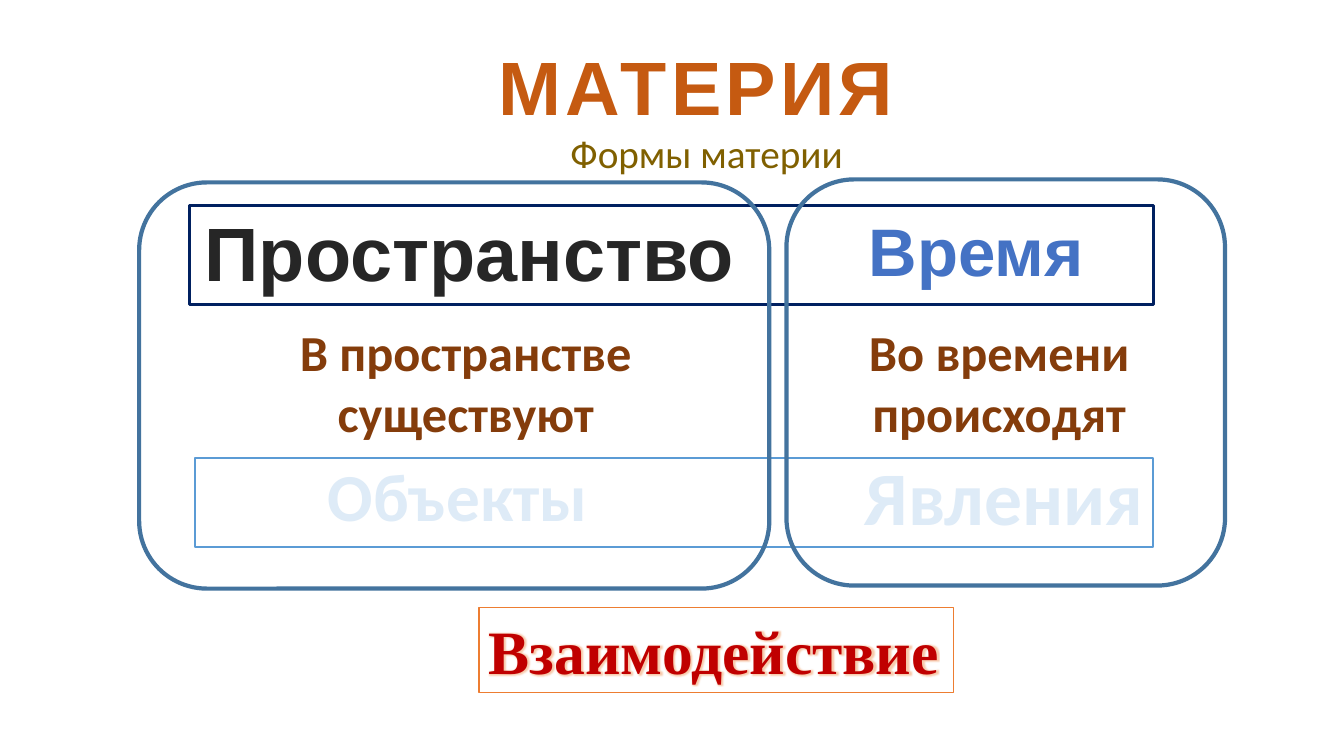
from lxml.etree import SubElement
from pptx import Presentation
from pptx.dml.color import RGBColor
from pptx.enum.shapes import MSO_SHAPE
from pptx.enum.text import MSO_ANCHOR, MSO_AUTO_SIZE, PP_ALIGN
from pptx.oxml.ns import qn
from pptx.util import Inches, Pt

# Grid: ten columns and ten rows to the inch
COLUMN = ROW = Inches(0.1)

WHITE = RGBColor(0xFF, 0xFF, 0xFF)
RUST = RGBColor(0xC5, 0x5A, 0x11)
OLIVE = RGBColor(0x80, 0x60, 0x00)
BLACK = RGBColor(0x26, 0x26, 0x26)
BLUE = RGBColor(0x44, 0x72, 0xC4)
BROWN = RGBColor(0x84, 0x3C, 0x0B)
PALE_BLUE = RGBColor(0xDE, 0xEB, 0xF7)
SKY = RGBColor(0x5B, 0x9B, 0xD5)
NAVY = RGBColor(0x00, 0x20, 0x60)
STEEL = RGBColor(0x43, 0x73, 0x9E)
RED = RGBColor(0xC0, 0x00, 0x00)
ORANGE = RGBColor(0xED, 0x7D, 0x31)


def place(left, top, width, height):
    """Turn grid columns and rows into slide lengths."""
    return [round(size) for size in
            (left * COLUMN, top * ROW, width * COLUMN, height * ROW)]


def write(box, text, *, size, color, font="Calibri", bold=True, wrap=False,
          align=PP_ALIGN.CENTER, spacing=0):
    """Fill a box with one formatted paragraph and return its run."""
    frame = box.text_frame
    frame.word_wrap = wrap
    frame.auto_size = MSO_AUTO_SIZE.SHAPE_TO_FIT_TEXT
    frame.vertical_anchor = MSO_ANCHOR.TOP
    para = frame.paragraphs[0]
    para.alignment = align
    span = para.add_run()
    span.text = text
    span.font.name = font
    span.font.size = Pt(size)
    span.font.bold = bold
    span.font.color.rgb = color
    if spacing:
        span.font._element.set("spc", str(spacing * 100))
    return span


def add_label(page, area, text, **text_format):
    write(page.shapes.add_textbox(*place(*area)), text, **text_format)


def add_frame(page, area, line, weight, fill=None, kind=MSO_SHAPE.RECTANGLE):
    box = page.shapes.add_shape(kind, *place(*area))
    box.shadow.inherit = False
    if fill is None:
        box.fill.background()
    else:
        box.fill.solid()
        box.fill.fore_color.rgb = fill
    box.line.color.rgb = line
    box.line.width = Pt(weight)
    return box


def add_text_glow(span, color):
    """Put a soft coloured halo around the letters."""
    properties = span.font._element
    effects = properties.makeelement(qn("a:effectLst"), {})
    properties.find(qn("a:solidFill")).addnext(effects)
    glow = SubElement(effects, qn("a:glow"), rad=str(Pt(3)))
    tint = SubElement(glow, qn("a:srgbClr"), val=str(color))
    SubElement(tint, qn("a:alpha"), val="40000")


def main():
    deck = Presentation()
    deck.slide_width, deck.slide_height = Inches(13.33), Inches(7.5)
    page = deck.slides.add_slide(deck.slide_layouts[6])

    # Heading
    add_label(page, (48.5, 3.5, 42, 10.1), "МАТЕРИЯ", size=54, color=RUST,
              font="Arial", align=PP_ALIGN.LEFT, spacing=3)
    add_label(page, (55.6, 12.3, 29.3, 5.7), "Формы материи", size=28,
              color=OLIVE, bold=False, align=PP_ALIGN.LEFT)

    # Bands across both halves
    add_frame(page, (18.8, 20.4, 95.6, 9.8), NAVY, 2.25)
    add_frame(page, (19.3, 45.4, 95.1, 8.9), SKY, 1.5, WHITE)

    # Forms of matter
    add_label(page, (19, 19.9, 55.1, 10.1), "Пространство", size=54,
              color=BLACK, font="Arial")
    add_label(page, (85.2, 20.3, 25.4, 9.1), "Время", size=48, color=BLUE,
              font="Arial", align=PP_ALIGN.LEFT)

    # What each form holds
    for left, width, text in ((25.8, 40.8, "В пространстве существуют"),
                              (84.4, 29.4, "Во времени происходят")):
        add_label(page, (left, 31.4, width, 13.1), text, size=36,
                  color=BROWN, wrap=True)
    add_label(page, (29.4, 44.6, 32, 9.1), "Объекты", size=48,
              color=PALE_BLUE)
    add_label(page, (84.6, 44.1, 30, 10.1), "Явления", size=54,
              color=PALE_BLUE)

    # Rounded outlines around each half
    for left, top, width in ((13.8, 18.1, 62.5), (78, 17.8, 43.5)):
        add_frame(page, (left, top, width, 40.3), STEEL, 3,
                  kind=MSO_SHAPE.ROUNDED_RECTANGLE)

    # Conclusion
    conclusion = add_frame(page, (47.5, 60.3, 47.1, 8.4), ORANGE, 1, WHITE)
    span = write(conclusion, "Взаимодействие", size=44, color=RED,
                 font="Times New Roman", align=PP_ALIGN.LEFT)
    add_text_glow(span, ORANGE)

    deck.save("out.pptx")


if __name__ == "__main__":
    main()
